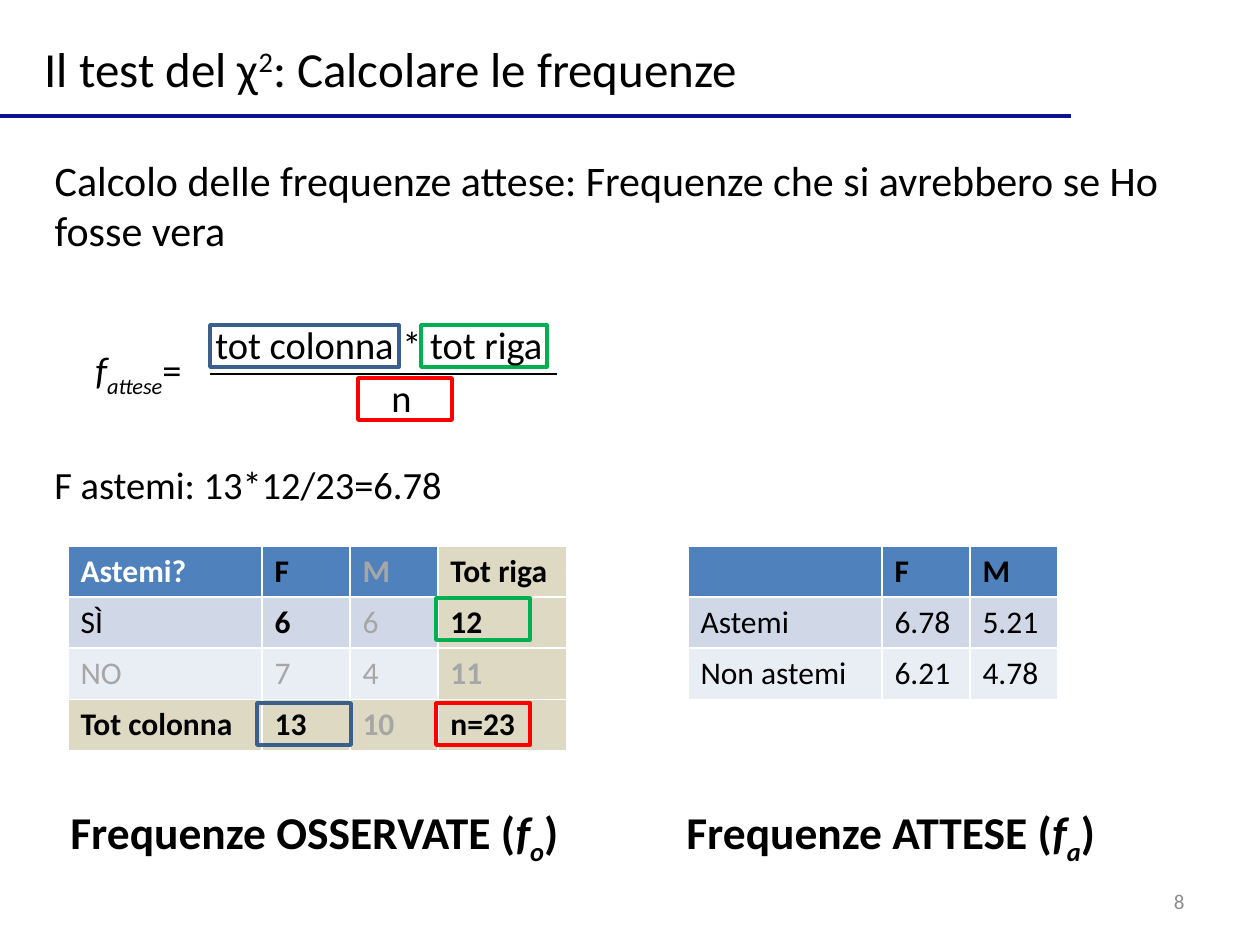
from dataclasses import dataclass

from lxml.etree import SubElement
from pptx import Presentation
from pptx.dml.color import RGBColor
from pptx.enum.shapes import MSO_CONNECTOR, MSO_SHAPE
from pptx.enum.text import MSO_ANCHOR, PP_ALIGN
from pptx.oxml.ns import qn
from pptx.util import Emu, Pt

PX = 914400 / 126
FONT = "Calibri"
SUBSCRIPT, SUPERSCRIPT = -25, 30

BLACK = RGBColor(0x00, 0x00, 0x00)
WHITE = RGBColor(0xFF, 0xFF, 0xFF)
NUMBER_GREY = RGBColor(0x8C, 0x8C, 0x8C)
MUTED = RGBColor(0xA6, 0xA6, 0xA6)
NAVY = RGBColor(0x0C, 0x12, 0x90)
HEADER_BLUE = RGBColor(0x4F, 0x81, 0xBD)
BANDS = RGBColor(0xD0, 0xD8, 0xE8), RGBColor(0xE9, 0xED, 0xF4)
TOTAL_BEIGE = RGBColor(0xDD, 0xD9, 0xC3)
COLUMN_BLUE = RGBColor(0x3A, 0x5F, 0x8C)
ROW_GREEN = RGBColor(0x00, 0xB0, 0x50)
COUNT_RED = RGBColor(0xFF, 0x00, 0x00)

ROW_HEIGHT = 51
TABLE_TOP = 546
COLUMN_WIDTHS = [194, 88, 88, 129]


@dataclass(frozen=True)
class Span:
    text: str
    italic: bool = False
    baseline: int = 0


@dataclass(frozen=True)
class Label:
    left: int
    top: int
    width: int
    height: int
    size: int
    spans: tuple[Span, ...]
    bold: bool = False
    color: RGBColor = BLACK
    align: PP_ALIGN = PP_ALIGN.LEFT
    anchor: MSO_ANCHOR = MSO_ANCHOR.TOP
    wrap: bool = False


@dataclass(frozen=True)
class Frame:
    left: int
    top: int
    width: int
    color: RGBColor


@dataclass(frozen=True)
class FrequencyTable:
    left: int
    rows: tuple[tuple[str, ...], ...]
    has_totals: bool = False
    bold: frozenset = frozenset()
    muted: frozenset = frozenset()
    white: frozenset = frozenset()


def px(length: int) -> Emu:
    return Emu(round(length * PX))


def style_font(font, size: int, color: RGBColor, bold: bool) -> None:
    font.name = FONT
    font.size = Pt(size)
    font.bold = bold
    font.color.rgb = color


def fill_label(box, label: Label) -> None:
    """Place a text box or placeholder and write its formatted spans."""
    box.left, box.top = px(label.left), px(label.top)
    box.width, box.height = px(label.width), px(label.height)
    frame = box.text_frame
    frame.word_wrap = label.wrap
    frame.vertical_anchor = label.anchor
    paragraph = frame.paragraphs[0]
    paragraph.alignment = label.align
    for span in label.spans:
        run = paragraph.add_run()
        run.text = span.text
        style_font(run.font, label.size, label.color, label.bold)
        run.font.italic = span.italic
        if span.baseline:
            run._r.get_or_add_rPr().set("baseline", str(span.baseline * 1000))


def remove_bullet(paragraph) -> None:
    paragraph.space_before = Pt(0)
    properties = paragraph._p.get_or_add_pPr()
    properties.set("marL", "0")
    properties.set("indent", "0")
    SubElement(properties, qn("a:buNone"))


def add_line(page, left: int, right: int, y: int, color: RGBColor, width: float) -> None:
    line = page.shapes.add_connector(
        MSO_CONNECTOR.STRAIGHT, px(left), px(y), px(right), px(y))
    line.line.color.rgb = color
    line.line.width = Pt(width)
    SubElement(line._element.spPr, qn("a:effectLst"))


def add_frame(page, frame: Frame) -> None:
    box = page.shapes.add_shape(
        MSO_SHAPE.RECTANGLE, px(frame.left), px(frame.top), px(frame.width), px(42))
    box.shadow.inherit = False
    box.fill.background()
    box.line.color.rgb = frame.color
    box.line.width = Pt(2)


def add_frequency_table(page, data: FrequencyTable) -> None:
    row_count, column_count = len(data.rows), len(data.rows[0])
    widths = COLUMN_WIDTHS[:column_count]
    table = page.shapes.add_table(
        row_count, column_count, px(data.left), px(TABLE_TOP),
        px(sum(widths)), px(ROW_HEIGHT * row_count)).table
    for column, width in zip(table.columns, widths):
        column.width = px(width)
    for r, texts in enumerate(data.rows):
        table.rows[r].height = px(ROW_HEIGHT)
        for c, text in enumerate(texts):
            total = data.has_totals and (r == row_count - 1 or c == column_count - 1)
            cell = table.cell(r, c)
            cell.fill.solid()
            cell.fill.fore_color.rgb = (
                TOTAL_BEIGE if total else HEADER_BLUE if r == 0 else BANDS[(r - 1) % 2])
            cell.text_frame.text = text
            color = (MUTED if (r, c) in data.muted
                     else WHITE if (r, c) in data.white else BLACK)
            bold = total or r == 0 or (r, c) in data.bold
            for run in cell.text_frame.paragraphs[0].runs:
                style_font(run.font, 18, color, bold)


def caption(left: int, width: int, text: str, index: str) -> Label:
    spans = (Span(f"{text} ("), Span("f", True), Span(index, True, SUBSCRIPT), Span(")"))
    return Label(left, 798, width, 68, 26, spans, bold=True)


TITLE = Label(32, 32, 727, 72, 28, (
    Span("Il test del χ"), Span("2", baseline=SUPERSCRIPT),
    Span(": Calcolare le frequenze")), anchor=MSO_ANCHOR.MIDDLE)
BODY = Label(42, 147, 1187, 115, 24, (
    Span("Calcolo delle frequenze attese: Frequenze che si avrebbero se Ho fosse vera"),),
    anchor=MSO_ANCHOR.MIDDLE, wrap=True)
LABELS = [
    Label(203, 315, 365, 59, 22, (Span("tot colonna * tot riga"),)),
    Label(379, 368, 45, 59, 22, (Span("n"),)),
    Label(83, 340, 121, 59, 22, (
        Span("f", True), Span("attese", True, SUBSCRIPT), Span("="))),
    Label(42, 455, 417, 59, 22, (Span("F astemi: 13*12/23=6.78"),)),
    caption(58, 519, "Frequenze OSSERVATE", "o"),
    caption(674, 440, "Frequenze ATTESE", "a"),
    Label(903, 876, 294, 50, 12, (Span("8"),), color=NUMBER_GREY,
          align=PP_ALIGN.RIGHT, anchor=MSO_ANCHOR.MIDDLE, wrap=True),
]
FRAMES = [
    Frame(210, 325, 189, COLUMN_BLUE), Frame(421, 325, 126, ROW_GREEN),
    Frame(358, 378, 94, COUNT_RED), Frame(257, 703, 94, COLUMN_BLUE),
    Frame(436, 598, 94, ROW_GREEN), Frame(436, 703, 94, COUNT_RED),
]
OBSERVED = FrequencyTable(68, (
    ("Astemi?", "F", "M", "Tot riga"),
    ("SÌ", "6", "6", "12"),
    ("NO", "7", "4", "11"),
    ("Tot colonna", "13", "10", "n=23")),
    has_totals=True, bold=frozenset({(1, 1)}), white=frozenset({(0, 0)}),
    muted=frozenset({(r, 2) for r in range(4)} | {(2, c) for c in range(4)}))
EXPECTED = FrequencyTable(688, (
    ("", "F", "M"),
    ("Astemi", "6.78", "5.21"),
    ("Non astemi", "6.21", "4.78")))


def main() -> None:
    deck = Presentation()
    deck.slide_width, deck.slide_height = px(1260), px(945)
    page = deck.slides.add_slide(deck.slide_layouts[1])
    title, body = page.placeholders
    fill_label(title, TITLE)
    fill_label(body, BODY)
    remove_bullet(body.text_frame.paragraphs[0])
    add_line(page, 0, 1071, 116, NAVY, 2)
    add_line(page, 210, 557, 374, BLACK, 1.5)
    for data in (OBSERVED, EXPECTED):
        add_frequency_table(page, data)
    for frame in FRAMES:
        add_frame(page, frame)
    for label in LABELS:
        fill_label(page.shapes.add_textbox(0, 0, 0, 0), label)
    deck.save("out.pptx")


if __name__ == "__main__":
    main()
